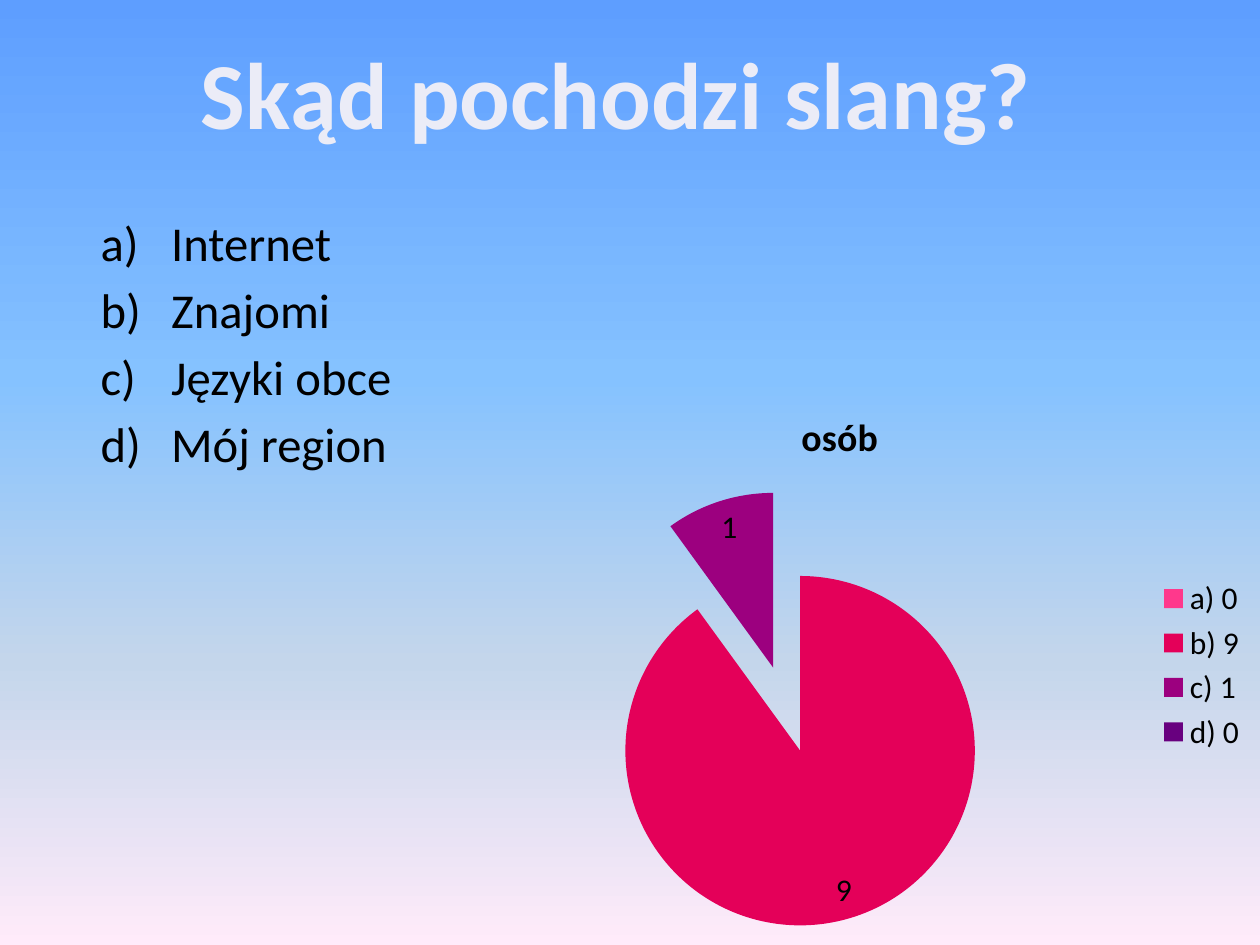
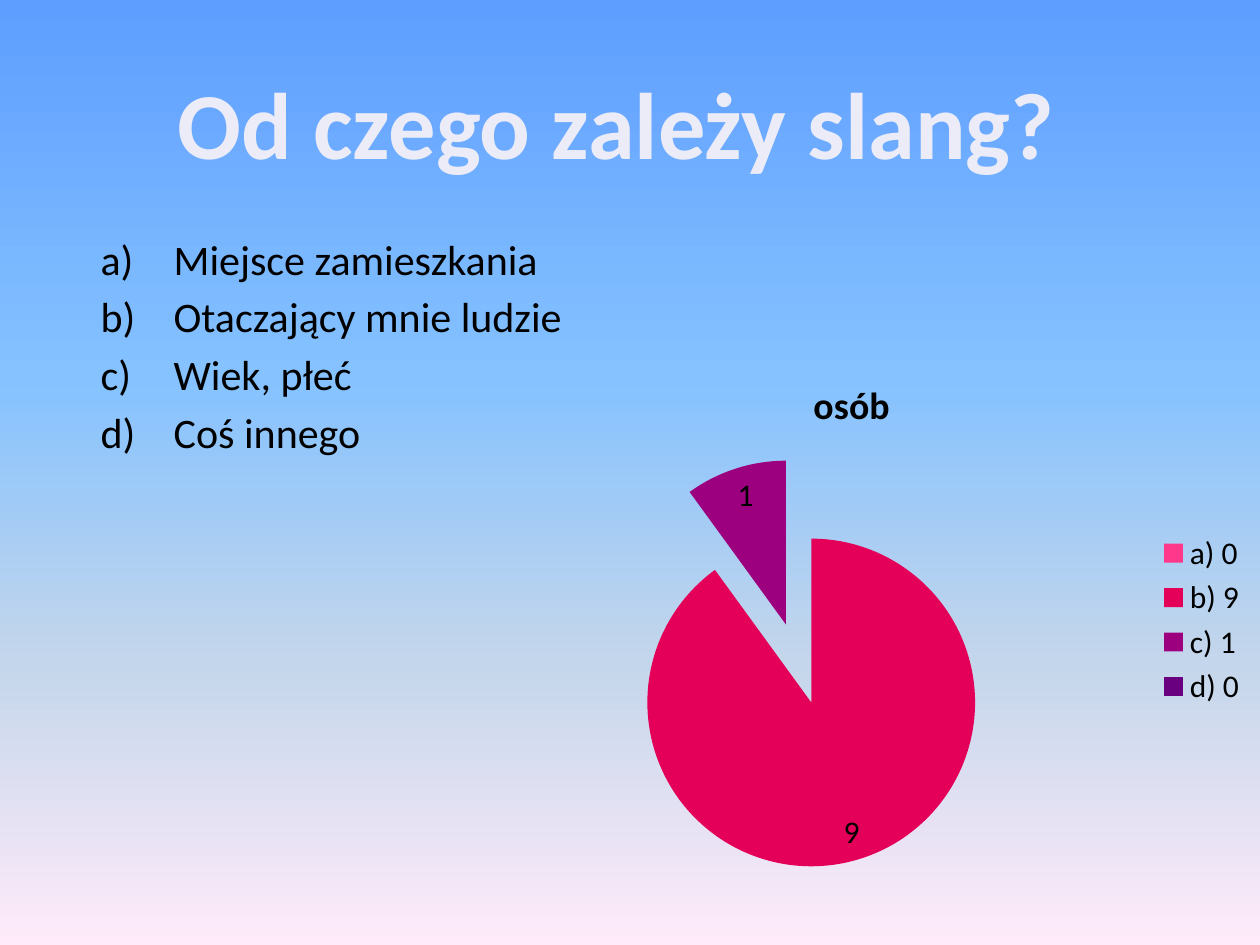
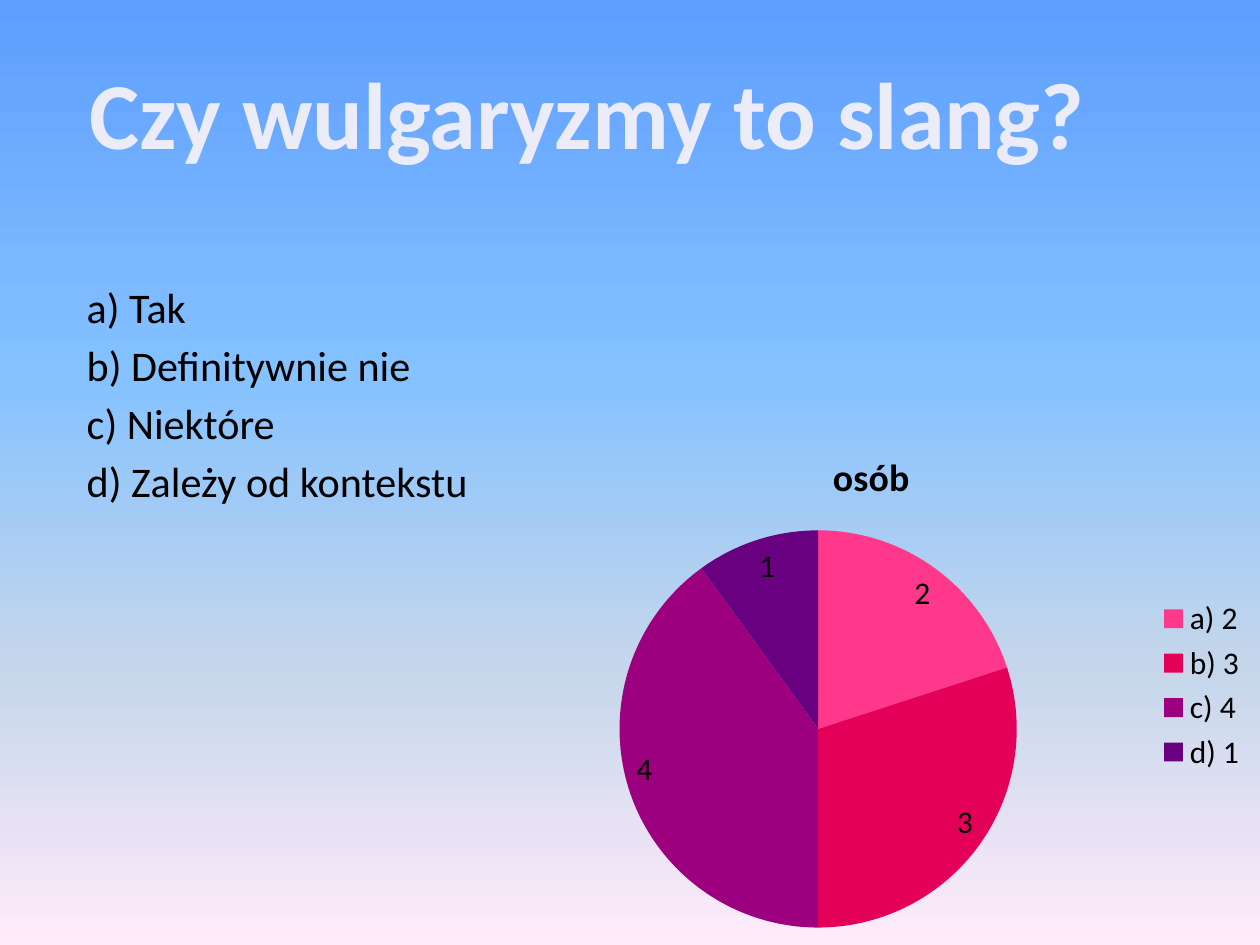
from lxml.etree import SubElement
from pptx import Presentation
from pptx.chart.data import CategoryChartData
from pptx.dml.color import RGBColor
from pptx.enum.chart import XL_CHART_TYPE, XL_LABEL_POSITION, XL_LEGEND_POSITION
from pptx.enum.text import MSO_AUTO_SIZE, PP_ALIGN
from pptx.oxml.ns import qn
from pptx.util import Inches, Pt

FONT = "Calibri"
BLACK = RGBColor(0x00, 0x00, 0x00)
TITLE_COLOR = RGBColor(0xEB, 0xEC, 0xF7)
TITLE_OUTLINE = RGBColor(0x00, 0x26, 0x75)
SLICE_COLORS = [
    RGBColor(0xFF, 0x38, 0x8C),
    RGBColor(0xE4, 0x00, 0x59),
    RGBColor(0x9C, 0x00, 0x7F),
    RGBColor(0x68, 0x00, 0x7F),
]
SKY_STOPS = [
    (0, RGBColor(0x5E, 0x9E, 0xFF)),
    (40, RGBColor(0x85, 0xC2, 0xFF)),
    (70, RGBColor(0xC4, 0xD6, 0xEB)),
    (100, RGBColor(0xFF, 0xEB, 0xFA)),
]


def set_font(font, size, color=BLACK, bold=False):
    font.name = FONT
    font.size = Pt(size)
    font.bold = bold
    font.color.rgb = color


def add_outline(run, color, width):
    """Outline the letters of a run."""
    properties = run._r.get_or_add_rPr()
    outline = SubElement(properties, qn("a:ln"), w=str(Pt(width)))
    fill = SubElement(outline, qn("a:solidFill"))
    SubElement(fill, qn("a:srgbClr"), val=str(color))
    properties.insert(0, outline)


def add_sky_slide(presentation):
    """Add a blank slide with the shared top-to-bottom gradient."""
    slide = presentation.slides.add_slide(presentation.slide_layouts[6])
    fill = slide.background.fill
    fill.gradient()
    fill.gradient_angle = 270
    stops = slide.element.find(".//" + qn("a:gsLst"))
    for stop in list(stops):
        stops.remove(stop)
    for percent, color in SKY_STOPS:
        stop = SubElement(stops, qn("a:gs"), pos=str(percent * 1000))
        SubElement(stop, qn("a:srgbClr"), val=str(color))
    return slide


def add_title(slide, text, left, top, width):
    box = slide.shapes.add_textbox(Inches(left), Inches(top), Inches(width), Inches(1.01))
    frame = box.text_frame
    frame.word_wrap = False
    frame.auto_size = MSO_AUTO_SIZE.SHAPE_TO_FIT_TEXT
    paragraph = frame.paragraphs[0]
    paragraph.alignment = PP_ALIGN.CENTER
    run = paragraph.add_run()
    run.text = text
    set_font(run.font, 54, TITLE_COLOR, bold=True)
    add_outline(run, TITLE_OUTLINE, 2.48)


def add_answers(slide, answers, left, top, size, indent=0, numbered=0):
    """List the answers; the first `numbered` ones get automatic a), b), ..."""
    box = slide.shapes.add_textbox(Inches(left), Inches(top), Inches(7), Inches(1.92))
    frame = box.text_frame
    frame.word_wrap = True
    for index, answer in enumerate(answers):
        paragraph = frame.paragraphs[0] if index == 0 else frame.add_paragraph()
        paragraph.text = answer
        paragraph.space_before = Pt(round(size * 0.18, 1))
        set_font(paragraph.font, size)
        properties = paragraph._p.get_or_add_pPr()
        properties.set("marL", str(Inches(indent)))
        properties.set("indent", str(-Inches(indent)))
        if index < numbered:
            bullet = SubElement(properties, qn("a:buAutoNum"), type="alphaLcParenR")
            properties.find(qn("a:defRPr")).addprevious(bullet)


def add_pie(slide, values, left, top, width, height, explosion=0):
    data = CategoryChartData()
    data.categories = [f"{letter}) {value}" for letter, value in zip("abcd", values)]
    data.add_series("osób", values)
    chart = slide.shapes.add_chart(
        XL_CHART_TYPE.PIE, Inches(left), Inches(top), Inches(width), Inches(height), data
    ).chart
    set_font(chart.font, 18)

    chart.has_title = True
    title = chart.chart_title.text_frame.paragraphs[0]
    title.text = "osób"
    set_font(title.font, 21.6, bold=True)

    chart.has_legend = True
    chart.legend.position = XL_LEGEND_POSITION.RIGHT
    chart.legend.include_in_layout = False

    plot = chart.plots[0]
    plot.vary_by_categories = True
    series = plot.series[0]
    for index, color in enumerate(SLICE_COLORS):
        fill = series.points[index].format.fill
        fill.solid()
        fill.fore_color.rgb = color
    if explosion:
        element = SubElement(series._element, qn("c:explosion"), val=str(explosion))
        series._element.find(qn("c:tx")).addnext(element)

    labels = series.data_labels
    labels.show_value = True
    labels.position = XL_LABEL_POSITION.INSIDE_END
    labels.number_format = "0;;;"  # zeros stay unlabelled
    labels.number_format_is_linked = False
    set_font(labels.font, 18)


def main():
    presentation = Presentation()
    presentation.slide_width = Inches(10)
    presentation.slide_height = Inches(7.5)

    slide = add_sky_slide(presentation)
    add_answers(slide, ["Internet", "Znajomi", "Języki obce", "Mój region"],
                0.7, 1.64, 27.8, indent=0.56, numbered=4)
    add_title(slide, "Skąd pochodzi slang?", 1.46, 0.23, 6.86)
    add_pie(slide, [0, 9, 1, 0], 3.33, 3.06, 6.67, 4.44, explosion=25)

    slide = add_sky_slide(presentation)
    add_answers(slide, ["Miejsce zamieszkania", "Otaczający mnie ludzie",
                        "c)\tWiek, płeć", "d)\tCoś innego"],
                0.7, 1.8, 24, indent=0.58, numbered=2)
    add_pie(slide, [0, 9, 1, 0], 3.52, 2.81, 6.48, 4.22, explosion=25)
    add_title(slide, "Od czego zależy slang?", 1.27, 0.47, 7.24)

    slide = add_sky_slide(presentation)
    add_answers(slide, ["a) Tak", "b) Definitywnie nie", "c) Niektóre",
                        "d) Zależy od kontekstu"], 0.59, 2.18, 24.1)
    add_pie(slide, [2, 3, 4, 1], 3.83, 3.38, 6.17, 4.12)
    add_title(slide, "Czy wulgaryzmy to slang?", 0.57, 0.39, 8.18)

    presentation.save("out.pptx")


if __name__ == "__main__":
    main()
